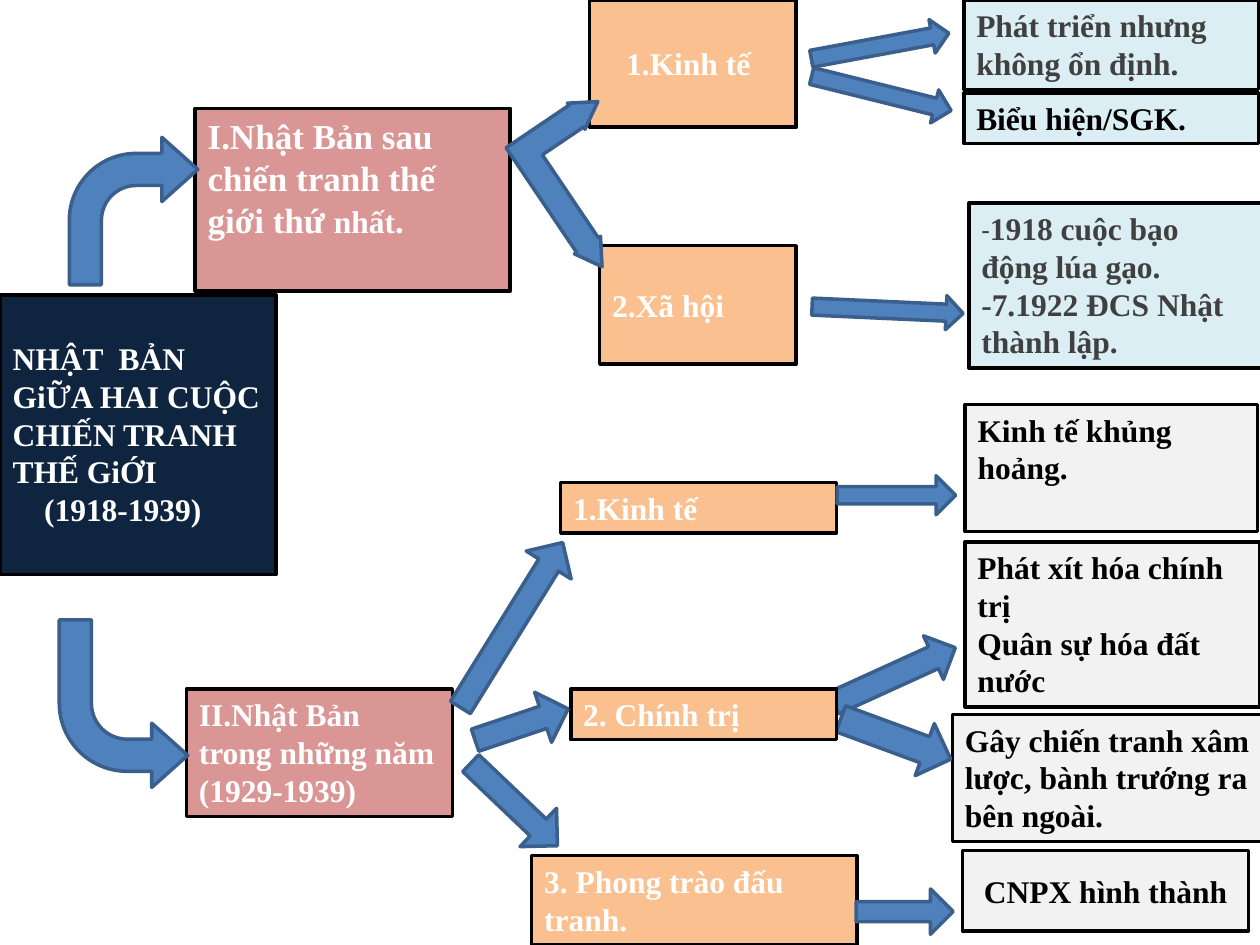
import dataclasses

import pptx
import pptx.dml.color
import pptx.enum.shapes
import pptx.enum.text
import pptx.util

SHAPE = pptx.enum.shapes.MSO_SHAPE
ALIGN = pptx.enum.text.PP_ALIGN
ANCHOR = pptx.enum.text.MSO_ANCHOR
FIT = pptx.enum.text.MSO_AUTO_SIZE
SCALE = 9144


def px(num):
    """Turn px, a hundred to the inch, into EMU."""
    return pptx.util.Emu(num * SCALE)


def font(name, size, bold):
    """Return the format values of one type style."""
    return {"name": name, "size": pptx.util.Pt(size), "bold": bold}


@dataclasses.dataclass(frozen=True)
class Theme:
    """Colours and type styles of the slide."""
    fills: dict
    inks: dict
    fonts: dict
    arrow: str = "4F81BD"
    edge: str = "3A5F8C"
    frame: str = "000000"
    line: int = 2


THEME = Theme(
    fills={"root": "0F243E", "part": "D99694", "topic": "FAC090",
           "blue": "DBEEF4", "fact": "DBEEF4", "grey": "F2F2F2"},
    inks={"root": "FFFFFF", "part": "FFFFFF", "topic": "FFFFFF",
          "blue": "404040", "fact": "000000", "grey": "000000"},
    fonts={"text": font("Times New Roman", 18, True),
           "head": font("Times New Roman", 20, True),
           "dash": font("Calibri", 16, False)},
)


def apply(item, form):
    """Set every format value on the item."""
    for key, val in form.items():
        setattr(item, key, val)


def color(code):
    """Return the colour for a hex code."""
    return pptx.dml.color.RGBColor.from_string(code)


def paint(shape, fill, line):
    """Give the shape a flat fill and line without shadow."""
    shape.fill.solid()
    shape.fill.fore_color.rgb = color(fill)
    shape.line.color.rgb = color(line)
    shape.line.width = pptx.util.Pt(THEME.line)


def place(shape, box, spot):
    """Put the shape at a spot relative to the region box."""
    left, top, wide, high = spot
    apply(shape, {"left": px(box[0] + left), "top": px(box[1] + top),
                  "width": px(wide), "height": px(high)})


def write(shape, kind, paras, **form):
    """Fill the shape with paragraphs of plain text or styled runs."""
    frame = shape.text_frame
    apply(frame, {"word_wrap": True, "auto_size": FIT.NONE,
                  "vertical_anchor": ANCHOR.TOP,
                  "margin_left": px(10), "margin_right": px(10),
                  "margin_top": px(5), "margin_bottom": px(5)})
    align = form.pop("align", ALIGN.LEFT)
    apply(frame, form)
    for pos, runs in enumerate(paras):
        para = frame.add_paragraph() if pos else frame.paragraphs[0]
        para.alignment = align
        for text, style in [(runs, "text")] if isinstance(runs, str) else runs:
            run = para.add_run()
            run.text = text
            apply(run.font, THEME.fonts[style])
            run.font.color.rgb = color(THEME.inks[kind])


def block(slide, box, kind, spot, *paras, **form):
    """Add one framed text block."""
    shape = slide.shapes.add_shape(SHAPE.RECTANGLE, 0, 0, 0, 0)
    shape.shadow.inherit = False
    place(shape, box, spot)
    paint(shape, THEME.fills[kind], THEME.frame)
    write(shape, kind, paras, **form)


def arrow(slide, box, spot, turn=0, kind=SHAPE.DOWN_ARROW, adj=()):
    """Add one block arrow, turned by degrees."""
    shape = slide.shapes.add_shape(kind, 0, 0, 0, 0)
    shape.shadow.inherit = False
    place(shape, box, spot)
    shape.rotation = turn
    for pos, val in enumerate(adj):
        shape.adjustments[pos] = val
    paint(shape, THEME.arrow, THEME.edge)
    return shape


def root(slide, box):
    """Place the title block and its two bent arrows."""
    title = slide.shapes.title
    place(title, box, (0, 125, 219, 222))
    paint(title, THEME.fills["root"], THEME.frame)
    write(title, "root", ["NHẬT  BẢN GiỮA HAI CUỘC CHIẾN TRANH THẾ GiỚI",
                          "(1918-1939)"], margin_top=px(35))
    pad = title.text_frame.paragraphs[1]._p.get_or_add_pPr()
    pad.set("marL", str(px(25)))
    bend = SHAPE.BENT_ARROW
    arrow(slide, box, (55, 0, 102, 117), 0, bend, (0.25, 0.25, 0.28, 0.52))
    low = arrow(slide, box, (47, 383, 102, 133), 0, bend,
                (0.25, 0.25, 0.28, 0.53))
    low._element.spPr.get_or_add_xfrm().set("flipV", "1")


def upper(slide, box):
    """Place part I with its topics, facts and arrows."""
    block(slide, box, "part", (0, 86, 250, 145),
          [("I.Nhật Bản sau chiến tranh thế giới thứ ", "head"),
           ("nhất", "text"), (".", "head")])
    block(slide, box, "topic", (313, 0, 164, 101), "1.Kinh tế",
          margin_left=px(29), margin_top=px(35))
    block(slide, box, "topic", (321, 195, 156, 94), "2.Xã hội",
          margin_top=px(32))
    block(slide, box, "blue", (610, 0, 234, 71),
          "Phát triển nhưng không ổn định.")
    block(slide, box, "fact", (610, 74, 234, 40), "Biểu hiện/SGK.")
    block(slide, box, "blue", (614, 161, 234, 131),
          [("-", "dash"), ("1918 cuộc bạo động lúa gạo.", "text")],
          "-7.1922 ĐCS Nhật thành lập.")
    arrow(slide, box, (271, 83, 83, 123), 146, SHAPE.LEFT_UP_ARROW,
          (0.25, 0.15, 0.25))
    for spot, turn in (((530, -19, 27, 111), 259.5),
                       ((531, 17, 27, 114), 283.9),
                       ((536, 186, 27, 120), 272.6)):
        arrow(slide, box, spot, turn)


def lower(slide, box):
    """Place part II with its topics, facts and arrows."""
    slim = (0.44, 0.5)
    block(slide, box, "part", (0, 226, 211, 101),
          "II.Nhật Bản trong những năm (1929-1939)")
    block(slide, box, "topic", (297, 62, 219, 40), "1.Kinh tế")
    block(slide, box, "topic", (274, 358, 258, 71), "3. Phong trào đấu tranh.")
    block(slide, box, "grey", (608, 246, 251, 101),
          "Gây chiến tranh xâm lược, bành trướng ra bên ngoài.")
    block(slide, box, "grey", (618, 109, 234, 131),
          "Phát xít hóa chính trị", "Quân sự hóa đất nước")
    block(slide, box, "grey", (618, 0, 232, 101), "Kinh tế khủng hoảng.")
    block(slide, box, "grey", (616, 354, 227, 64), "CNPX hình thành",
          align=ALIGN.CENTER, vertical_anchor=ANCHOR.MIDDLE)
    for spot, turn, adj in (((548, 25, 31, 94), 270, slim),
                            ((543, 162, 38, 106), 245.5, ()),
                            ((552, 364, 36, 77), 270, slim),
                            ((541, 219, 44, 93), 290.2, ())):
        arrow(slide, box, spot, turn, adj=adj)
    block(slide, box, "topic", (305, 226, 211, 40), "2. Chính trị")
    for spot, turn in (((237, 98, 42, 154), 211.8),
                       ((239, 270, 42, 95), 313.6),
                       ((245, 215, 42, 78), 251.4)):
        arrow(slide, box, spot, turn, adj=slim)


def main():
    """Build the slide and save it."""
    deck = pptx.Presentation()
    deck.slide_width, deck.slide_height = px(1000), px(750)
    slide = deck.slides.add_slide(deck.slide_layouts[5])
    upper(slide, (155, 0))
    lower(slide, (148, 321))
    root(slide, (0, 109))
    deck.save("out.pptx")


if __name__ == "__main__":
    main()
